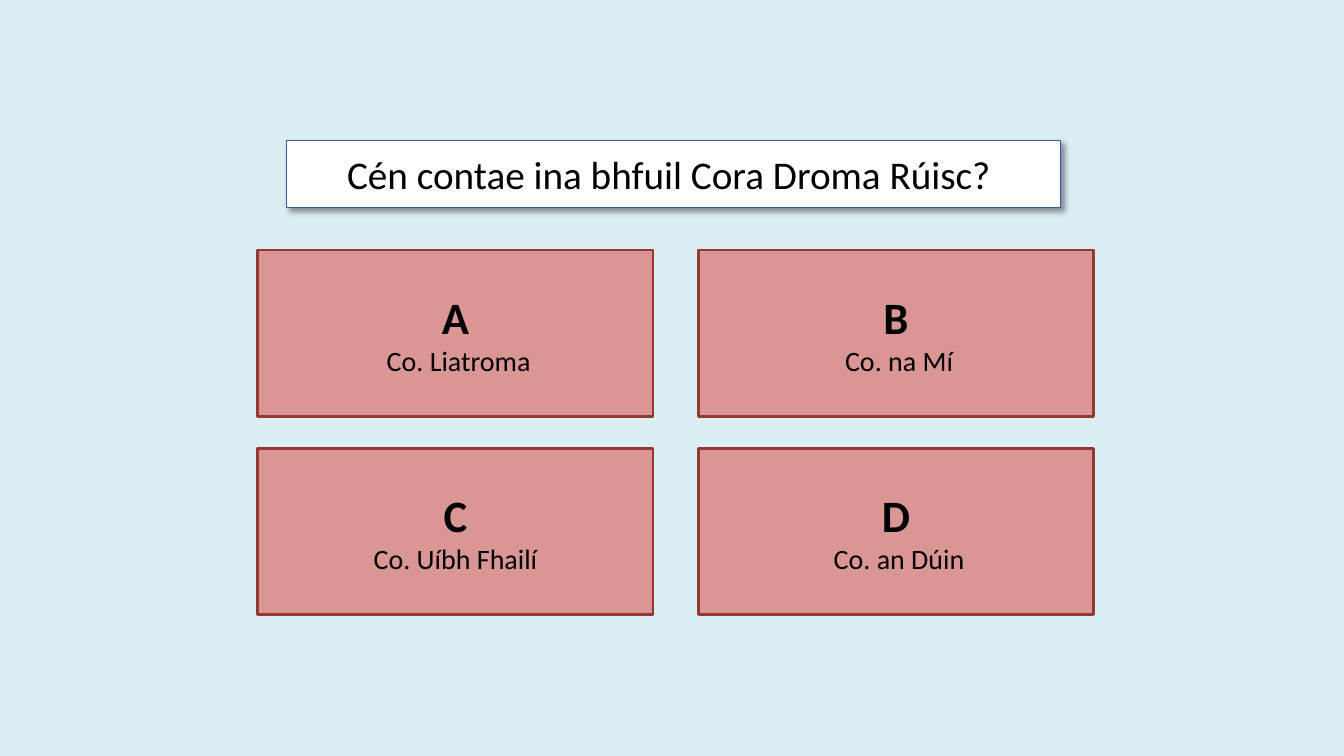
from dataclasses import dataclass

from lxml import etree
from pptx import Presentation
from pptx import util as u
from pptx.dml import color
from pptx.enum import shapes, text
from pptx.oxml import ns


@dataclass(frozen=True)
class Theme:
    """Colours, font and type sizes of the quiz."""
    back: str = "DBEEF4"
    card: str = "D99694"
    edge: str = "953735"
    panel: str = "FFFFFF"
    rim: str = "376092"
    ink: str = "000000"
    face: str = "Calibri"
    ask: float = 28
    mark: float = 32
    reply: float = 20


class Quiz:
    """Draws quiz elements on one slide in a shared theme."""

    def __init__(self, slide, theme):
        """Keep the slide and theme, and paint the background."""
        self.slide, self.theme = slide, theme
        self.paint(slide.background.fill, theme.back)

    def paint(self, fill, tone):
        """Make a fill solid in one colour."""
        fill.solid()
        fill.fore_color.rgb = color.RGBColor.from_string(tone)

    def frame(self, shape, fill, edge, width):
        """Fill and outline a shape, and centre its text vertically."""
        self.paint(shape.fill, fill)
        self.paint(shape.line.fill, edge)
        shape.line.width = u.Pt(width)
        shape.shadow.inherit = False
        shape.text_frame.word_wrap = True
        shape.text_frame.auto_size = text.MSO_AUTO_SIZE.NONE
        shape.text_frame.vertical_anchor = text.MSO_ANCHOR.MIDDLE

    def label(self, par, words, size, bold=False):
        """Set one centred paragraph."""
        par.text = words
        par.alignment = text.PP_ALIGN.CENTER
        font = par.font
        font.name, font.size, font.bold = self.theme.face, u.Pt(size), bold
        font.color.rgb = color.RGBColor.from_string(self.theme.ink)

    def shade(self, shape):
        """Add a soft shadow falling down and to the right."""
        effects = shape.element.spPr.find(ns.qn("a:effectLst"))
        outer = etree.SubElement(
            effects, ns.qn("a:outerShdw"), blurRad=str(u.Pt(4)),
            dist=str(u.Pt(3)), dir="2700000", algn="tl", rotWithShape="0")
        tone = etree.SubElement(outer, ns.qn("a:srgbClr"), val=self.theme.ink)
        etree.SubElement(tone, ns.qn("a:alpha"), val="40000")

    def ask(self, words, left, top, width, height):
        """Place the question in the title placeholder."""
        title = self.slide.shapes.title
        title.left, title.top = u.Cm(left), u.Cm(top)
        title.width, title.height = u.Cm(width), u.Cm(height)
        self.frame(title, self.theme.panel, self.theme.rim, 0.75)
        self.shade(title)
        par = title.text_frame.paragraphs[0]
        self.label(par, words, self.theme.ask)
        par.space_before = u.Pt(self.theme.ask * 0.2)

    def card(self, mark, reply, left, top, width, height):
        """Add an answer card with its letter above the reply."""
        box = self.slide.shapes.add_shape(
            shapes.MSO_SHAPE.RECTANGLE,
            u.Cm(left), u.Cm(top), u.Cm(width), u.Cm(height))
        self.frame(box, self.theme.card, self.theme.edge, 2)
        body = box.text_frame
        self.label(body.paragraphs[0], mark, self.theme.mark, True)
        self.label(body.add_paragraph(), reply, self.theme.reply)


def main():
    """Build and save the quiz slide."""
    deck = Presentation()
    deck.slide_width, deck.slide_height = u.Cm(33.87), u.Cm(19.05)
    quiz = Quiz(deck.slides.add_slide(deck.slide_layouts[5]), Theme())
    quiz.ask("Cén contae ina bhfuil Cora Droma Rúisc? ", 7.21, 3.53, 19.51, 1.7)

    replies = (" Co. Liatroma", " Co. na Mí", "Co. Uíbh Fhailí", " Co. an Dúin")
    for i, (mark, reply) in enumerate(zip("ABCD", replies)):
        row, col = divmod(i, 2)
        quiz.card(mark, reply, 6.5 + col * 11.1, 6.3 + row * 5, 9.96, 4.19)
    deck.save("out.pptx")


if __name__ == "__main__":
    main()
